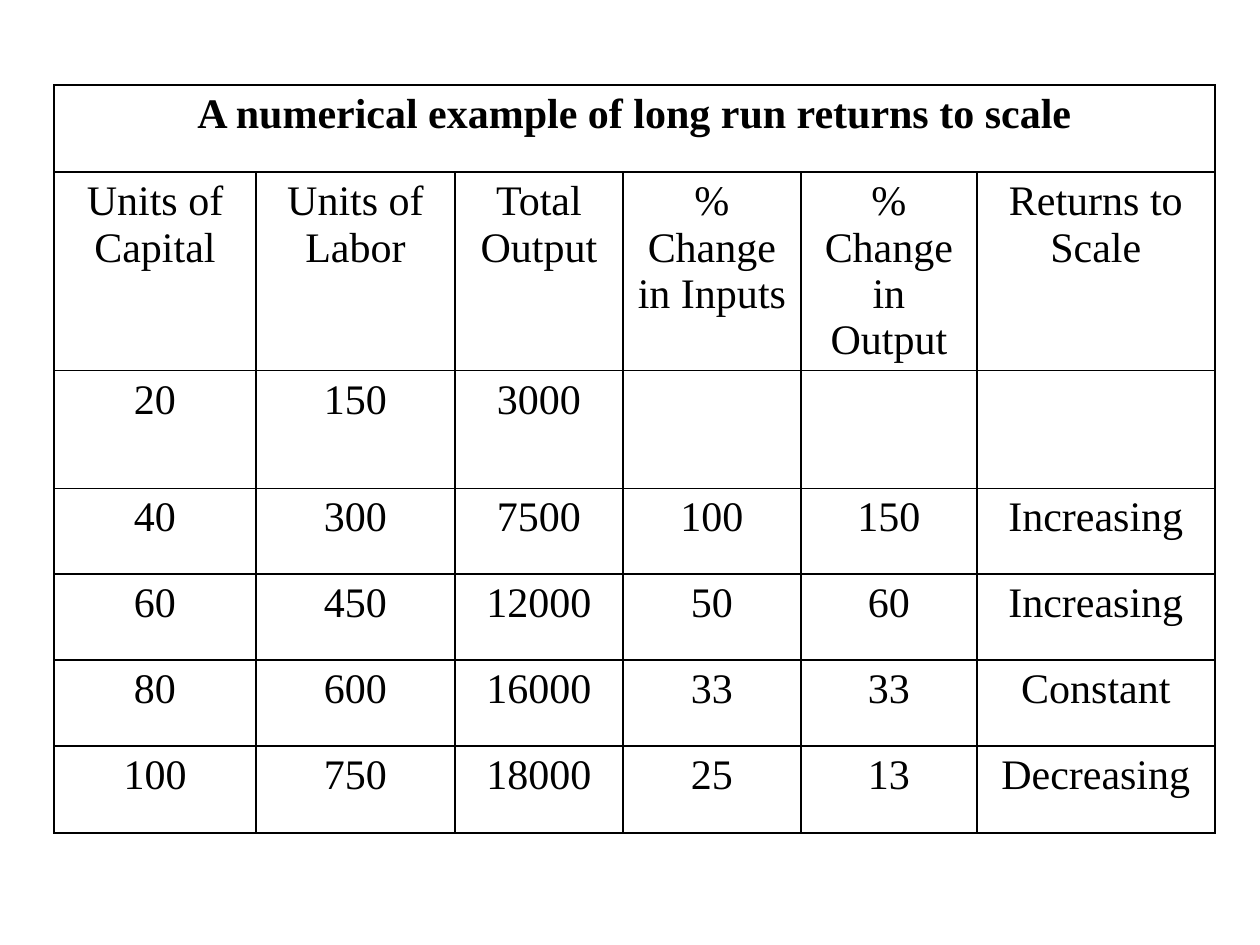
from pptx import Presentation
from pptx.dml.color import RGBColor
from pptx.enum.text import PP_ALIGN
from pptx.oxml import parse_xml
from pptx.oxml.ns import nsdecls
from pptx.util import Pt

PX = 914400 // 126
BLACK = "000000"
TITLE = "A numerical example of long run returns to scale"
COL_WIDTHS = [202, 199, 168, 178, 176, 238]
ROW_HEIGHTS = [87, 198, 118, 86, 86, 86, 87]
ROWS = [
    ["Units of Capital", "Units of Labor", "Total Output",
     "% Change in Inputs", "% Change in Output", "Returns to Scale"],
    ["20", "150", "3000", "", "", ""],
    ["40", "300", "7500", "100", "150", "Increasing"],
    ["60", "450", "12000", "50", "60", "Increasing"],
    ["80", "600", "16000", "33", "33", "Constant"],
    ["100", "750", "18000", "25", "13", "Decreasing"],
]


def write(cell, text, size=24, bold=False, color=BLACK, font="Times New Roman"):
    p = cell.text_frame.paragraphs[0]
    p.alignment = PP_ALIGN.CENTER
    r = p.add_run()
    r.text = text
    r.font.size = Pt(size)
    r.font.bold = bold
    r.font.name = font
    r.font.color.rgb = RGBColor.from_string(color)


def add_borders(cell, color=BLACK, width=1):
    tc_pr = cell._tc.get_or_add_tcPr()
    for i, side in enumerate(("lnL", "lnR", "lnT", "lnB")):
        tc_pr.insert(i, parse_xml(
            f'<a:{side} {nsdecls("a")} w="{Pt(width)}"><a:solidFill>'
            f'<a:srgbClr val="{color}"/></a:solidFill></a:{side}>'))


prs = Presentation()
prs.slide_width, prs.slide_height = 1260 * PX, 945 * PX
s = prs.slides.add_slide(prs.slide_layouts[6])

table = s.shapes.add_table(
    len(ROW_HEIGHTS), len(COL_WIDTHS), 54 * PX, 85 * PX,
    sum(COL_WIDTHS) * PX, sum(ROW_HEIGHTS) * PX).table
table.first_row = table.horz_banding = False
for column, width in zip(table.columns, COL_WIDTHS):
    column.width = width * PX
for row, height in zip(table.rows, ROW_HEIGHTS):
    row.height = height * PX

for cell in table.iter_cells():
    cell.fill.background()
    add_borders(cell)

table.cell(0, 0).merge(table.cell(0, len(COL_WIDTHS) - 1))
write(table.cell(0, 0), TITLE, bold=True)
for i, values in enumerate(ROWS, start=1):
    for j, value in enumerate(values):
        if value:
            write(table.cell(i, j), value)

prs.save("out.pptx")
